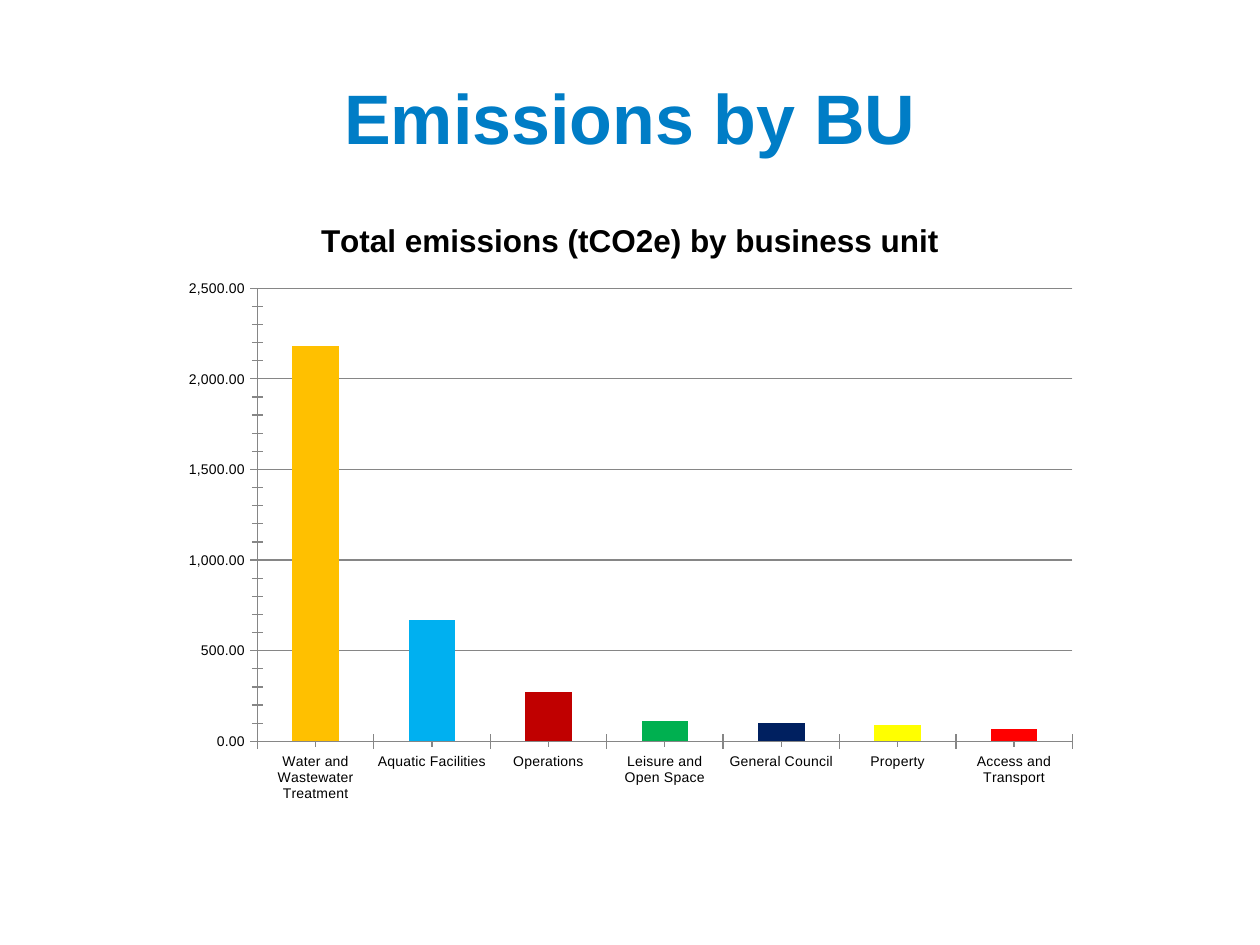
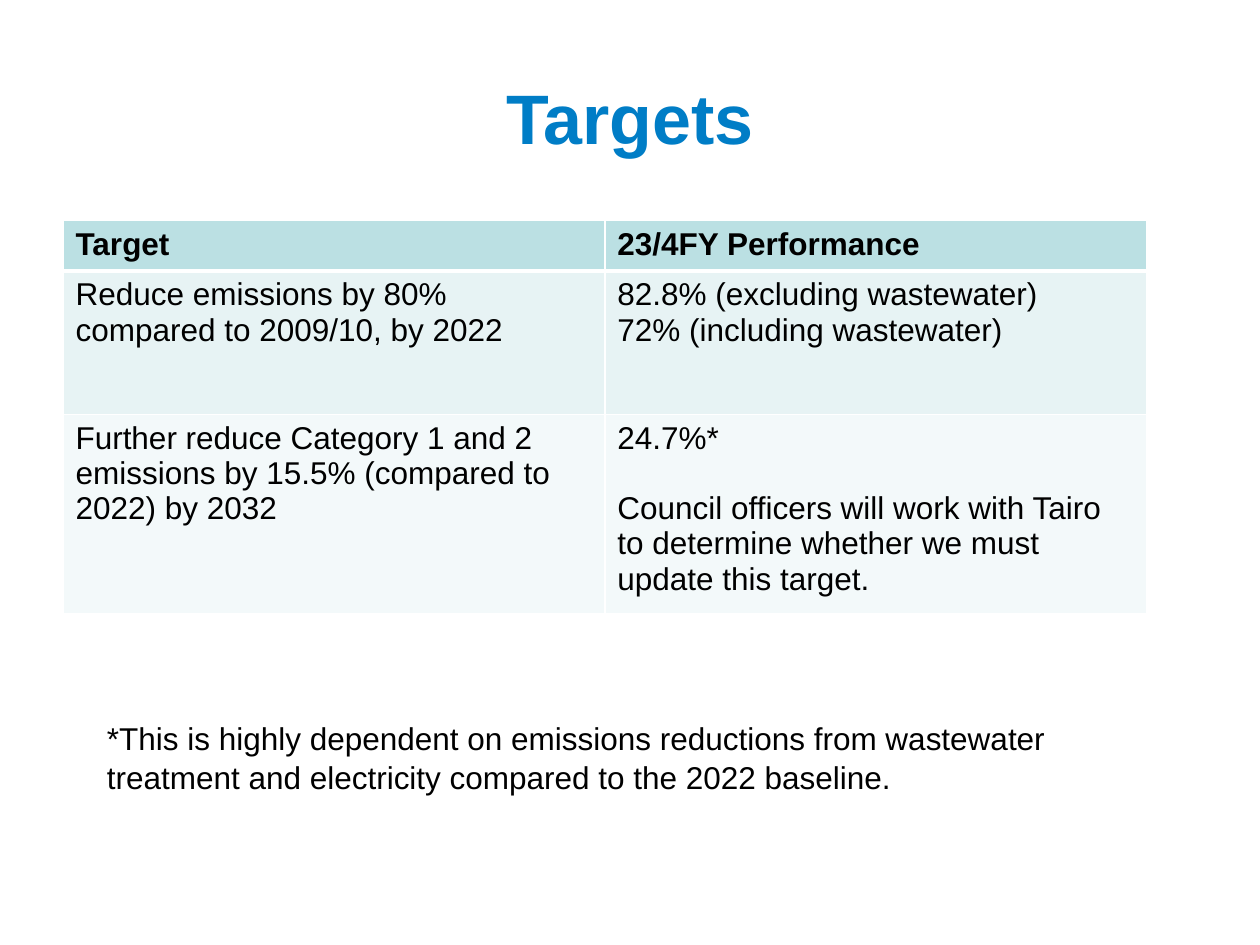
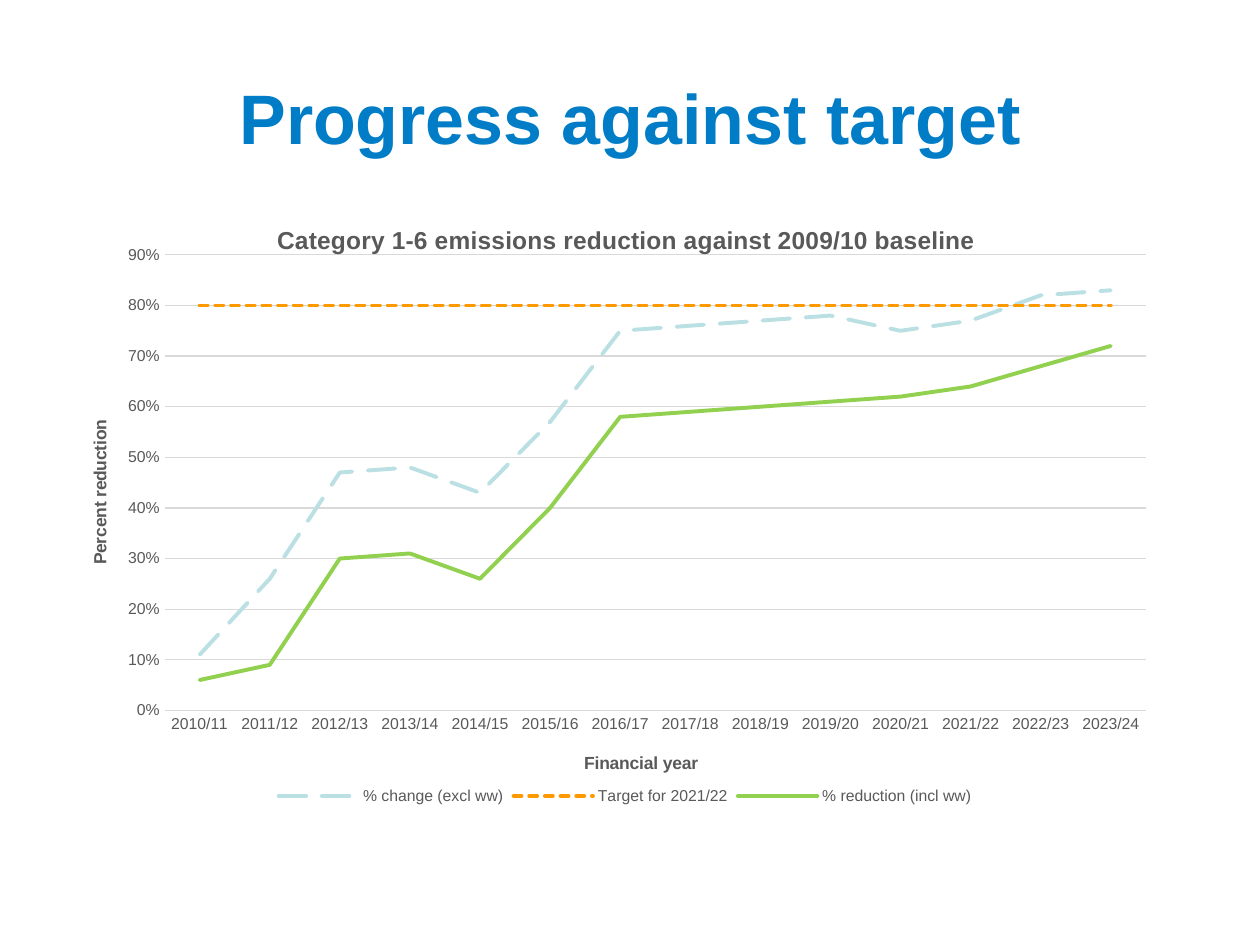
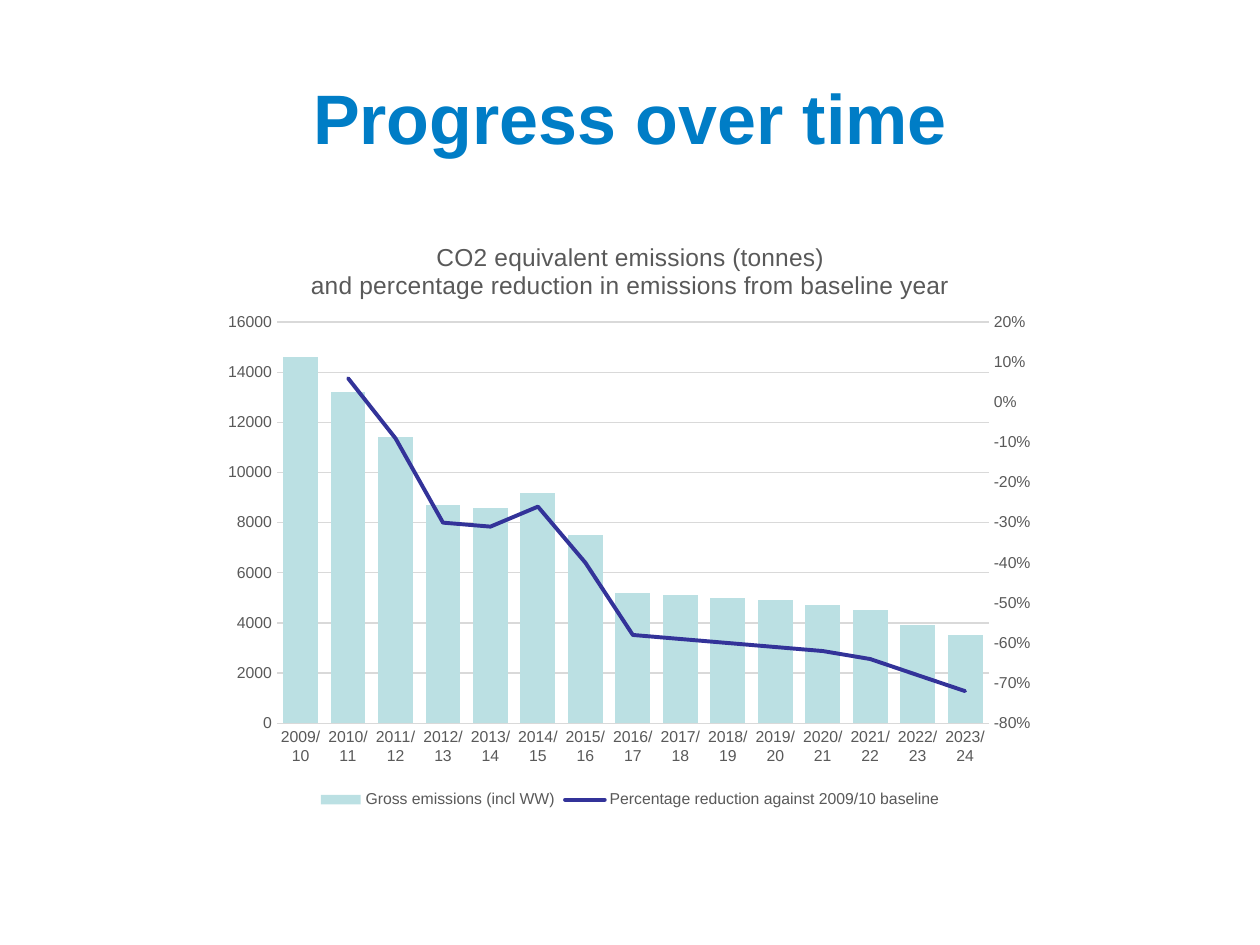
from dataclasses import dataclass

from lxml import etree
from pptx import Presentation
from pptx.chart.axis import ValueAxis
from pptx.chart.data import CategoryChartData
from pptx.dml.color import RGBColor
from pptx.enum.chart import XL_CHART_TYPE, XL_LEGEND_POSITION, XL_MARKER_STYLE, XL_TICK_MARK
from pptx.enum.dml import MSO_LINE
from pptx.enum.text import MSO_ANCHOR, PP_ALIGN
from pptx.oxml import parse_xml
from pptx.oxml.ns import nsdecls, qn
from pptx.util import Inches, Pt

COLUMN = XL_CHART_TYPE.COLUMN_CLUSTERED
LINE = XL_CHART_TYPE.LINE
BOTTOM = XL_LEGEND_POSITION.BOTTOM
NO_MARKER = XL_MARKER_STYLE.NONE
CROSS, NO_TICK = XL_TICK_MARK.CROSS, XL_TICK_MARK.NONE
LONG_DASH, SHORT_DASH = MSO_LINE.LONG_DASH, MSO_LINE.SQUARE_DOT
TOP, MIDDLE = MSO_ANCHOR.TOP, MSO_ANCHOR.MIDDLE
LEFT, CENTER = PP_ALIGN.LEFT, PP_ALIGN.CENTER

GRID_COLS, GRID_ROWS = 100, 75


@dataclass(frozen=True)
class Theme:
    font: str = "Arial"
    title: str = "007DC6"
    ink: str = "000000"
    muted: str = "595959"
    axis: str = "868686"
    rule: str = "D9D9D9"
    white: str = "FFFFFF"
    teal: str = "BBE0E3"
    row_fills: tuple = ("BBE0E3", "E7F3F4", "F3F9FA")
    orange: str = "FF9900"
    green: str = "92D050"
    indigo: str = "333399"
    units: tuple = ("FFC000", "00B0F0", "C00000", "00B050", "002060", "FFFF00", "FF0000")
    title_pt: int = 40
    body_pt: int = 18
    chart_title_pt: int = 14
    axis_title_pt: int = 10
    label_pt: int = 9
    small_pt: int = 8


def rgb(color):
    return RGBColor.from_string(color)


def style_font(font, size, color, bold=False):
    font.name, font.size, font.bold = Theme.font, Pt(size), bold
    font.color.rgb = rgb(color)


def write_text(tf, text, size=Theme.body_pt, color=Theme.ink, bold=False,
               align=LEFT, gap=0, spacing=None):
    for i, line in enumerate(text.split("\n")):
        p = tf.paragraphs[0] if i == 0 else tf.add_paragraph()
        p.alignment = align
        if spacing:
            p.line_spacing = spacing
        if i and gap:
            p.space_before = Pt(gap)
        r = p.add_run()
        r.text = line
        style_font(r.font, size, color, bold)


def set_layout(parent, index, **shares):
    for old in parent.findall(qn("c:layout")):
        parent.remove(old)
    layout = etree.Element(qn("c:layout"))
    manual = etree.SubElement(layout, qn("c:manualLayout"))
    if "w" in shares:
        etree.SubElement(manual, qn("c:layoutTarget")).set("val", "inner")
    for side in ("x", "y"):
        etree.SubElement(manual, qn(f"c:{side}Mode")).set("val", "edge")
    for side, share in shares.items():
        etree.SubElement(manual, qn(f"c:{side}")).set("val", str(share))
    parent.insert(index, layout)


def set_title(title, text, at=None, turned=False, **fmt):
    tf = title.text_frame
    write_text(tf, text, align=CENTER, **fmt)
    if turned:
        tf._txBody.bodyPr.set("rot", "-5400000")
    if at:
        set_layout(title._element, 1, x=at[0], y=at[1])


def style_line(line, color, width=0.75):
    line.color.rgb = rgb(color)
    line.width = Pt(width)


def style_axis(axis, size=Theme.label_pt, color=Theme.muted, line=None, tick=NO_TICK,
               grid=None, fmt=None, scale=None):
    style_font(axis.tick_labels.font, size, color)
    axis.major_tick_mark = axis.minor_tick_mark = tick
    axis.has_major_gridlines = grid is not None
    if grid:
        style_line(axis.major_gridlines.format.line, grid)
    if line:
        style_line(axis.format.line, line)
    else:
        axis.format.line.fill.background()
    if fmt:
        axis.tick_labels.number_format = fmt
        axis.tick_labels.number_format_is_linked = False
    if scale:
        axis.minimum_scale, axis.maximum_scale, axis.major_unit = scale


def style_series(series, color, dash=None):
    style_line(series.format.line, color, 2.25)
    if dash:
        series.format.line.dash_style = dash
    for ln in series._element.iterfind(f"{qn('c:spPr')}/{qn('a:ln')}"):
        ln.set("cap", "rnd")
    series.marker.style = NO_MARKER
    series.smooth = False


def move_to_right_axis(chart):
    area = chart._chartSpace.chart.plotArea
    bars = area.find(qn("c:barChart"))
    ser = bars.findall(qn("c:ser"))[-1]
    for flag in ser.findall(qn("c:invertIfNegative")):
        ser.remove(flag)
    lines = parse_xml(
        f'<c:lineChart {nsdecls("c")}><c:grouping val="standard"/><c:varyColors val="0"/>'
        '<c:marker val="1"/><c:axId val="501"/><c:axId val="502"/></c:lineChart>')
    lines.insert(2, ser)
    bars.addnext(lines)
    axis_xml = (
        '<c:{kind} {ns}><c:axId val="{id}"/><c:scaling><c:orientation val="minMax"/></c:scaling>'
        '<c:delete val="{hidden}"/><c:axPos val="{pos}"/><c:majorTickMark val="none"/>'
        '<c:minorTickMark val="none"/><c:tickLblPos val="nextTo"/><c:crossAx val="{other}"/>'
        '<c:crosses val="{crosses}"/></c:{kind}>')
    cat = dict(kind="catAx", id=501, other=502, hidden=1, pos="b", crosses="autoZero")
    val = dict(kind="valAx", id=502, other=501, hidden=0, pos="r", crosses="max")
    for axis in (cat, val):
        area.append(parse_xml(axis_xml.format(ns=nsdecls("c"), **axis)))
    return ValueAxis(area.findall(qn("c:valAx"))[-1])


class Deck:
    def __init__(self):
        self.prs = Presentation()
        self.prs.slide_width, self.prs.slide_height = Inches(10), Inches(7.5)
        self.theme = Theme()
        self.slide = None

    def box(self, col, row, cols, rows):
        dx, dy = self.prs.slide_width / GRID_COLS, self.prs.slide_height / GRID_ROWS
        return [round(v) for v in (col * dx, row * dy, cols * dx, rows * dy)]

    def add_slide(self, title):
        self.slide = self.prs.slides.add_slide(self.prs.slide_layouts[6])
        self.text((5, 3, 90, 12.5), title, anchor=MIDDLE, size=self.theme.title_pt,
                  color=self.theme.title, bold=True, align=CENTER)

    def text(self, place, text, anchor=TOP, **fmt):
        tf = self.slide.shapes.add_textbox(*self.box(*place)).text_frame
        tf.word_wrap = True
        tf.vertical_anchor = anchor
        write_text(tf, text, **fmt)

    def table(self, place, rows, heights):
        sp = self.slide.shapes.add_table(len(rows), len(rows[0]), *self.box(*place))
        for i, row in enumerate(rows):
            sp.table.rows[i].height = self.box(0, 0, 0, heights[i])[3]
            for j, text in enumerate(row):
                cell = sp.table.cell(i, j)
                write_text(cell.text_frame, text.replace("\n\n", "\n"), bold=i == 0,
                           gap=20 if "\n\n" in text else 0)
                self.borders(cell, {"T": 3 if i == 1 else 1, "B": 3 if i == 0 else 1})
                cell.fill.solid()
                cell.fill.fore_color.rgb = rgb(self.theme.row_fills[i])

    def borders(self, cell, widths):
        tcPr = cell._tc.get_or_add_tcPr()
        for side in "LRTB":
            ln = etree.SubElement(tcPr, qn(f"a:ln{side}"), w=str(int(Pt(widths.get(side, 1)))))
            fill = etree.SubElement(ln, qn("a:solidFill"))
            etree.SubElement(fill, qn("a:srgbClr"), val=self.theme.white)

    def chart(self, place, kind, cats, series, plot, legend=True):
        data = CategoryChartData()
        data.categories = cats
        for name, values in series:
            data.add_series(name, values)
        chart = self.slide.shapes.add_chart(kind, *self.box(*place), data).chart
        style_font(chart.font, self.theme.axis_title_pt, self.theme.ink)
        chart.plots[0].vary_by_categories = False
        chart.has_legend = legend
        if legend:
            chart.legend.position = BOTTOM
            chart.legend.include_in_layout = False
            style_font(chart.legend.font, self.theme.label_pt, self.theme.muted)
        set_layout(chart._chartSpace.chart.plotArea, 0, **dict(zip("xywh", plot)))
        return chart


def emissions_by_unit(deck):
    t = deck.theme
    deck.add_slide("Emissions by BU")
    units = ["Water and Wastewater Treatment", "Aquatic Facilities", "Operations",
             "Leisure and Open Space", "General Council", "Property", "Access and Transport"]
    chart = deck.chart((13.5, 15.5, 73, 49.2), COLUMN, units,
                       [("Series 1", [2180, 670, 270, 110, 100, 90, 70])],
                       plot=(0.095, 0.15, 0.886, 0.731), legend=False)
    set_title(chart.chart_title, "Total emissions (tCO2e) by business unit", bold=True)
    look = dict(size=t.small_pt, color=t.ink, line=t.axis, tick=CROSS)
    style_axis(chart.category_axis, **look)
    style_axis(chart.value_axis, grid=t.axis, fmt="#,##0.00", scale=(0, 2500, 500), **look)
    chart.plots[0].gap_width = 150
    bars = chart.plots[0].series[0]
    bars.format.fill.solid()
    bars.format.fill.fore_color.rgb = rgb(t.teal)
    for i, color in enumerate(t.units):
        fill = bars.points[i].format.fill
        fill.solid()
        fill.fore_color.rgb = rgb(color)


def targets(deck):
    deck.add_slide("Targets")
    deck.table((5, 17.5, 86, 30.4), [
        ("Target", "23/4FY Performance"),
        ("Reduce emissions by 80% compared to 2009/10, by 2022",
         "82.8% (excluding wastewater)\n72% (including wastewater)"),
        ("Further reduce Category 1 and 2 emissions by 15.5% (compared to 2022) by 2032",
         "24.7%*\n\nCouncil officers will work with Tairo to determine whether we must "
         "update this target."),
    ], heights=(3.9, 11.4, 15))
    deck.text((7.5, 56.4, 78, 7.1),
              "*This is highly dependent on emissions reductions from wastewater treatment "
              "and electricity compared to the 2022 baseline.", spacing=1.05)


def progress_against_target(deck, years, reduction):
    t = deck.theme
    deck.add_slide("Progress against target")
    excluding = [0.11, 0.26, 0.47, 0.48, 0.43, 0.57, 0.75,
                 0.76, 0.77, 0.78, 0.75, 0.77, 0.82, 0.83]
    chart = deck.chart((5.9, 15.5, 87.4, 48.8), LINE, years,
                       [("% change (excl ww)", excluding),
                        ("Target for 2021/22", [0.8] * len(years)),
                        ("% reduction (incl ww)", reduction)],
                       plot=(0.082, 0.097, 0.891, 0.741))
    set_title(chart.chart_title, "Category 1-6 emissions reduction against 2009/10 baseline",
              at=(0.18, 0.04), size=t.chart_title_pt, color=t.muted, bold=True)
    look = dict(size=t.axis_title_pt, color=t.muted, bold=True)
    set_title(chart.category_axis.axis_title, "Financial year", at=(0.46, 0.9), **look)
    set_title(chart.value_axis.axis_title, "Percent reduction", at=(0.01, 0.36),
              turned=True, **look)
    style_axis(chart.category_axis, line=t.rule)
    style_axis(chart.value_axis, grid=t.rule, fmt="0%", scale=(0, 0.9, 0.1))
    styles = [(t.teal, LONG_DASH), (t.orange, SHORT_DASH), (t.green, None)]
    for series, (color, dash) in zip(chart.plots[0].series, styles):
        style_series(series, color, dash)


def progress_over_time(deck, years, reduction):
    t = deck.theme
    deck.add_slide("Progress over time")
    gross = [14600, 13200, 11400, 8700, 8600, 9200, 7500, 5200,
             5100, 5000, 4900, 4700, 4500, 3900, 3500]
    change = [None, reduction[0]] + [-v for v in reduction[1:]]
    chart = deck.chart((16.8, 17, 66.4, 47.6), COLUMN, ["2009/10"] + years,
                       [("Gross emissions (incl WW)", gross),
                        ("Percentage reduction against 2009/10 baseline", change)],
                       plot=(0.078, 0.18, 0.851, 0.669))
    set_title(chart.chart_title, "CO2 equivalent emissions (tonnes)\n"
              "and percentage reduction in emissions from baseline year",
              at=(0.114, 0.04), size=t.chart_title_pt, color=t.muted)
    style_axis(chart.category_axis, line=t.rule)
    style_axis(chart.value_axis, grid=t.rule, fmt="0", scale=(0, 16000, 2000))
    style_axis(move_to_right_axis(chart), fmt="0%", scale=(-0.8, 0.2, 0.1))
    bars, line = chart.plots
    bars.gap_width, bars.overlap = 36, -27
    fill = bars.series[0].format.fill
    fill.solid()
    fill.fore_color.rgb = rgb(t.teal)
    style_series(line.series[0], t.indigo)


def main():
    deck = Deck()
    years = [f"{y}/{y % 100 + 1}" for y in range(2010, 2024)]
    reduction = [0.06, 0.09, 0.3, 0.31, 0.26, 0.4, 0.58,
                 0.59, 0.6, 0.61, 0.62, 0.64, 0.68, 0.72]
    emissions_by_unit(deck)
    targets(deck)
    progress_against_target(deck, years, reduction)
    progress_over_time(deck, years, reduction)
    deck.prs.save("out.pptx")


if __name__ == "__main__":
    main()
